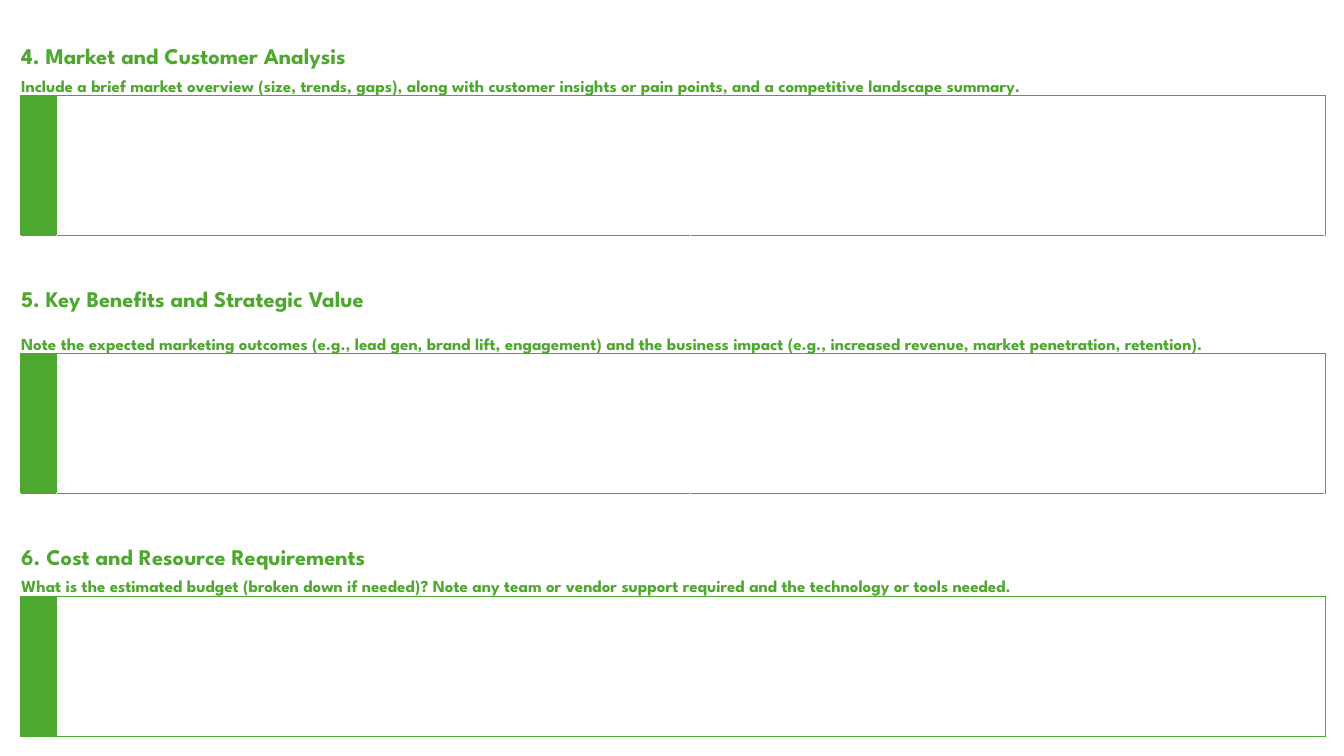
from lxml import etree
from pptx import Presentation
from pptx import util as u
from pptx.dml.color import RGBColor
from pptx.enum import text
from pptx.oxml.ns import qn

GREEN = RGBColor(0x4E, 0xA7, 0x2E)
FONT = "League Spartan"

HEADING_HEIGHT, BOX_HEIGHT, GAP_HEIGHT = 6.13, 18.53, 4
COLUMN_WIDTHS = [2.7, 47.19, 47.19]
SECTIONS = [
    ("4. Market and Customer Analysis",
     "Include a brief market overview (size, trends, gaps), along with customer insights "
     "or pain points, and a competitive landscape summary.", 3.47),
    ("5. Key Benefits and Strategic Value",
     "Note the expected marketing outcomes (e.g., lead gen, brand lift, engagement) and the "
     "business impact (e.g., increased revenue, market penetration, retention).", 5.47),
    ("6. Cost and Resource Requirements",
     "What is the estimated budget (broken down if needed)? Note any team or vendor support "
     "required and the technology or tools needed.", 3.47),
]


class ProposalForm:
    """Draws form parts on one slide, with lengths in percent of the slide's size."""

    def __init__(self, deck):
        self.width, self.height = deck.slide_width, deck.slide_height
        self.slide = deck.slides.add_slide(deck.slide_layouts[6])

    def across(self, percent):
        return u.Emu(round(self.width * percent / 100))

    def down(self, percent):
        return u.Emu(round(self.height * percent / 100))

    def table(self, left, top, widths, heights):
        frame = self.slide.shapes.add_table(
            len(heights), len(widths), self.across(left), self.down(top),
            self.across(sum(widths)), self.down(sum(heights)))
        form = frame.table
        form.first_row = form.horz_banding = False
        for column, width in zip(form.columns, widths):
            column.width = self.across(width)
        for row, height in zip(form.rows, heights):
            row.height = self.down(height)
        for cell in form.iter_cells():
            cell.margin_left = cell.margin_right = cell.margin_top = u.Inches(0.01)
            cell.margin_bottom = 0
        return form

    def borders(self, cells, sides):
        for cell in cells:
            properties = cell._tc.get_or_add_tcPr()
            for side in sides:
                line = etree.SubElement(properties, qn(f"a:ln{side}"), w=str(u.Pt(0.5)))
                paint = etree.SubElement(line, qn("a:solidFill"))
                etree.SubElement(paint, qn("a:srgbClr"), val=str(GREEN))

    def label(self, cell, wording, size):
        cell.text_frame.text = wording
        cell.vertical_anchor = text.MSO_ANCHOR.BOTTOM
        font = cell.text_frame.paragraphs[0].runs[0].font
        font.name, font.size, font.bold = FONT, u.Pt(size), True
        font.color.rgb = GREEN

    def section(self, rows, heading, prompt):
        heading_row, prompt_row, box_row, *gap_rows = rows
        self.borders(prompt_row, "B")
        self.borders(box_row, "LRTB")
        for gap_row in gap_rows:
            self.borders(gap_row, "T")
        heading_row[0].merge(heading_row[1])
        prompt_row[0].merge(prompt_row[2])
        box_row[1].merge(box_row[2])
        self.label(heading_row[0], heading, 16)
        self.label(prompt_row[0], prompt, 12)

    def finish(self, rows):
        for index, row in enumerate(rows):
            for cell in row:
                cell.fill.background()
                paragraph = cell.text_frame.paragraphs[0]
                etree.SubElement(paragraph._p, qn("a:endParaRPr"), sz="1000")
            if index % 4 == 2:
                row[0].fill.solid()
                row[0].fill.fore_color.rgb = GREEN


def main():
    deck = Presentation()
    deck.slide_width, deck.slide_height = u.Inches(13.33), u.Inches(7.5)
    proposal = ProposalForm(deck)
    heights = [height for _, _, prompt_height in SECTIONS
               for height in (HEADING_HEIGHT, prompt_height, BOX_HEIGHT, GAP_HEIGHT)][:-1]
    form = proposal.table(1.5, 3.07, COLUMN_WIDTHS, heights)
    rows = [list(row.cells) for row in form.rows]
    for number, (heading, prompt, _) in enumerate(SECTIONS):
        proposal.section(rows[4 * number:4 * number + 4], heading, prompt)
    proposal.finish(rows)
    deck.save("out.pptx")


if __name__ == "__main__":
    main()
